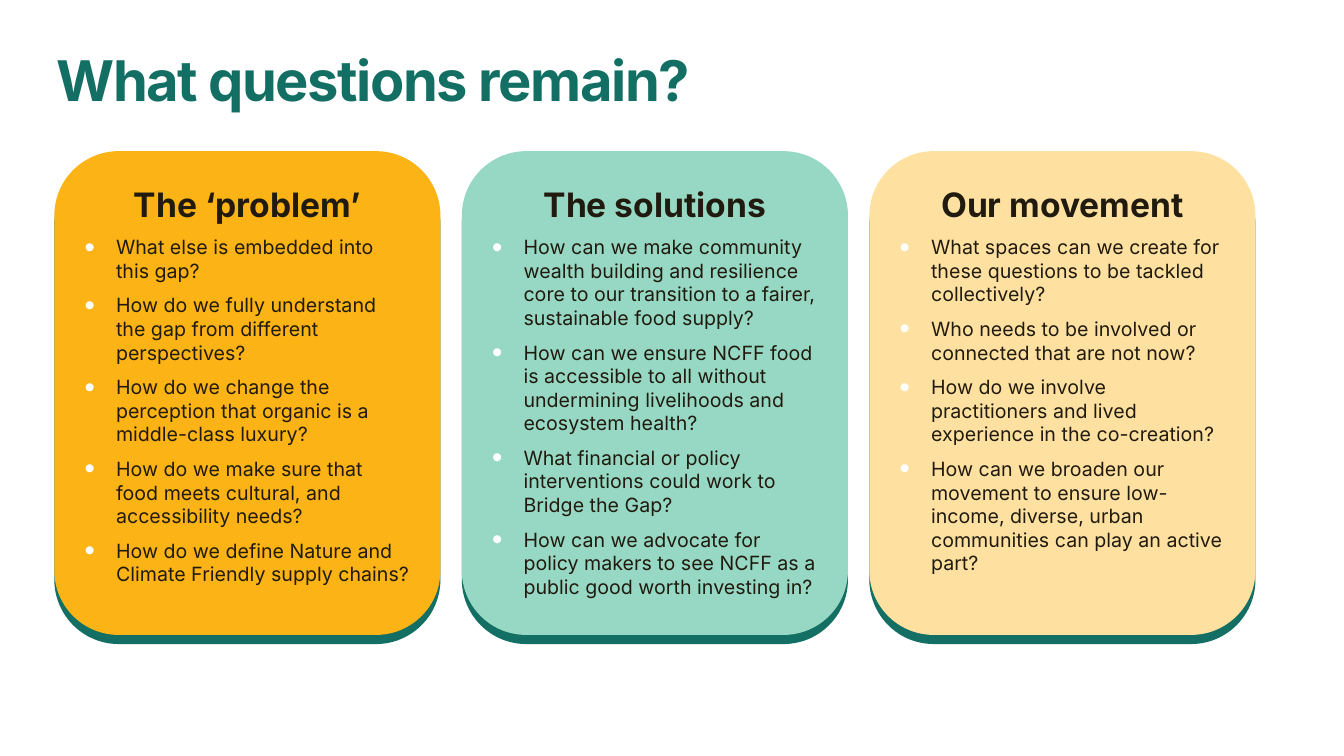
from dataclasses import dataclass

from lxml.etree import SubElement
from pptx import Presentation
from pptx.dml.color import RGBColor
from pptx.enum.shapes import MSO_SHAPE
from pptx.enum.text import MSO_ANCHOR, MSO_AUTO_SIZE, PP_ALIGN
from pptx.oxml.ns import qn
from pptx.util import Cm, Pt


@dataclass(frozen=True)
class Theme:
    face: str = "Inter"
    green: str = "136F63"
    ink: str = "211B0F"
    dot: str = "FFFFFF"
    amber: str = "FCB315"
    mint: str = "97D8C4"
    cream: str = "FEE1A1"
    title: int = 40
    head: int = 24
    body: int = 14
    gap: int = 8


class Deck:
    def __init__(self, theme):
        self.theme = theme
        self.file = Presentation()
        self.file.slide_width = Cm(33.87)
        self.file.slide_height = Cm(19.05)
        self.slide = self.file.slides.add_slide(self.file.slide_layouts[4])

    def place(self, holder, left, top, width, height):
        holder.left, holder.top = Cm(left), Cm(top)
        holder.width, holder.height = Cm(width), Cm(height)
        self.slide.shapes._spTree.append(holder._element)
        frame = holder.text_frame
        frame.word_wrap = True
        frame.auto_size = MSO_AUTO_SIZE.NONE
        frame.vertical_anchor = MSO_ANCHOR.TOP
        return frame

    def style(self, para, size, color, bold):
        para.space_before = Pt(0)
        para.font.name = self.theme.face
        para.font.size = Pt(size)
        para.font.bold = bold
        para.font.color.rgb = RGBColor.from_string(color)

    def title(self, text, *box):
        para = self.place(self.slide.shapes.title, *box).paragraphs[0]
        para.text = text
        para.alignment = PP_ALIGN.LEFT
        self.style(para, self.theme.title, self.theme.green, True)
        para.runs[0]._r.get_or_add_rPr().set("spc", "-100")

    def panel(self, color, *box):
        shape = self.slide.shapes.add_shape(
            MSO_SHAPE.ROUNDED_RECTANGLE, *map(Cm, box))
        shape.shadow.inherit = False
        shape.fill.solid()
        shape.fill.fore_color.rgb = RGBColor.from_string(color)
        shape.line.fill.background()

    def bullet(self, para):
        props = para._p.get_or_add_pPr()
        props.set("marL", str(Cm(0.79)))
        props.set("indent", str(-Cm(0.79)))
        color = SubElement(props, qn("a:buClr"))
        SubElement(color, qn("a:srgbClr"), val=self.theme.dot)
        SubElement(props, qn("a:buSzPct"), val="150000")
        SubElement(props, qn("a:buFont"), typeface="Arial")
        SubElement(props, qn("a:buChar"), char="•")

    def plain(self, para):
        props = para._p.get_or_add_pPr()
        props.set("marL", "0")
        props.set("indent", "0")
        SubElement(props, qn("a:buNone"))

    def list(self, slot, head, items, *box):
        theme = self.theme
        frame = self.place(self.slide.placeholders[slot], *box)
        first = frame.paragraphs[0]
        first.text = head
        self.plain(first)
        first.alignment = PP_ALIGN.CENTER
        first.space_after = Pt(theme.gap)
        self.style(first, theme.head, theme.ink, True)
        for item in items:
            para = frame.add_paragraph()
            para.text = item
            self.bullet(para)
            para.alignment = PP_ALIGN.LEFT
            para.space_after = Pt(theme.gap)
            self.style(para, theme.body, theme.ink, False)

    def clean(self):
        for holder in list(self.slide.placeholders):
            if not holder.text_frame.text:
                holder._element.getparent().remove(holder._element)


def main():
    theme = Theme()
    deck = Deck(theme)
    deck.title("What questions remain?", 1.17, 1.02, 18.69, 1.96)
    cards = [
        (theme.amber, "The ‘problem’", [
            "What else is embedded into this gap?",
            "How do we fully understand the gap from different perspectives?",
            "How do we change the perception that organic is a "
            "middle-class luxury?",
            "How do we make sure that food meets cultural, and "
            "accessibility needs?",
            "How do we define Nature and Climate Friendly supply chains?",
        ]),
        (theme.mint, "The solutions", [
            "How can we make community wealth building and resilience core "
            "to our transition to a fairer, sustainable food supply?",
            "How can we ensure NCFF food is accessible to all without "
            "undermining livelihoods and ecosystem health?",
            "What financial or policy interventions could work to "
            "Bridge the Gap?",
            "How can we advocate for policy makers to see NCFF as a "
            "public good worth investing in?",
        ]),
        (theme.cream, "Our movement", [
            "What spaces can we create for these questions to be tackled "
            "collectively?",
            "Who needs to be involved or connected that are not now?",
            "How do we involve practitioners and lived experience in the "
            "co-creation?",
            "How can we broaden our movement to ensure low-income, diverse, "
            "urban communities can play an active part?",
        ]),
    ]
    left, top, width, height, pitch = 1.37, 3.81, 9.73, 12.19, 10.27
    for slot, (color, head, items) in enumerate(cards):
        x = left + slot * pitch
        deck.panel(theme.green, x, top + 0.23, width, height)
        deck.panel(color, x, top, width, height)
        deck.list(slot + 1, head, items, x + 0.51, 4.5, width - 1.02, 11.38)
    deck.clean()
    deck.file.save("out.pptx")


if __name__ == "__main__":
    main()
